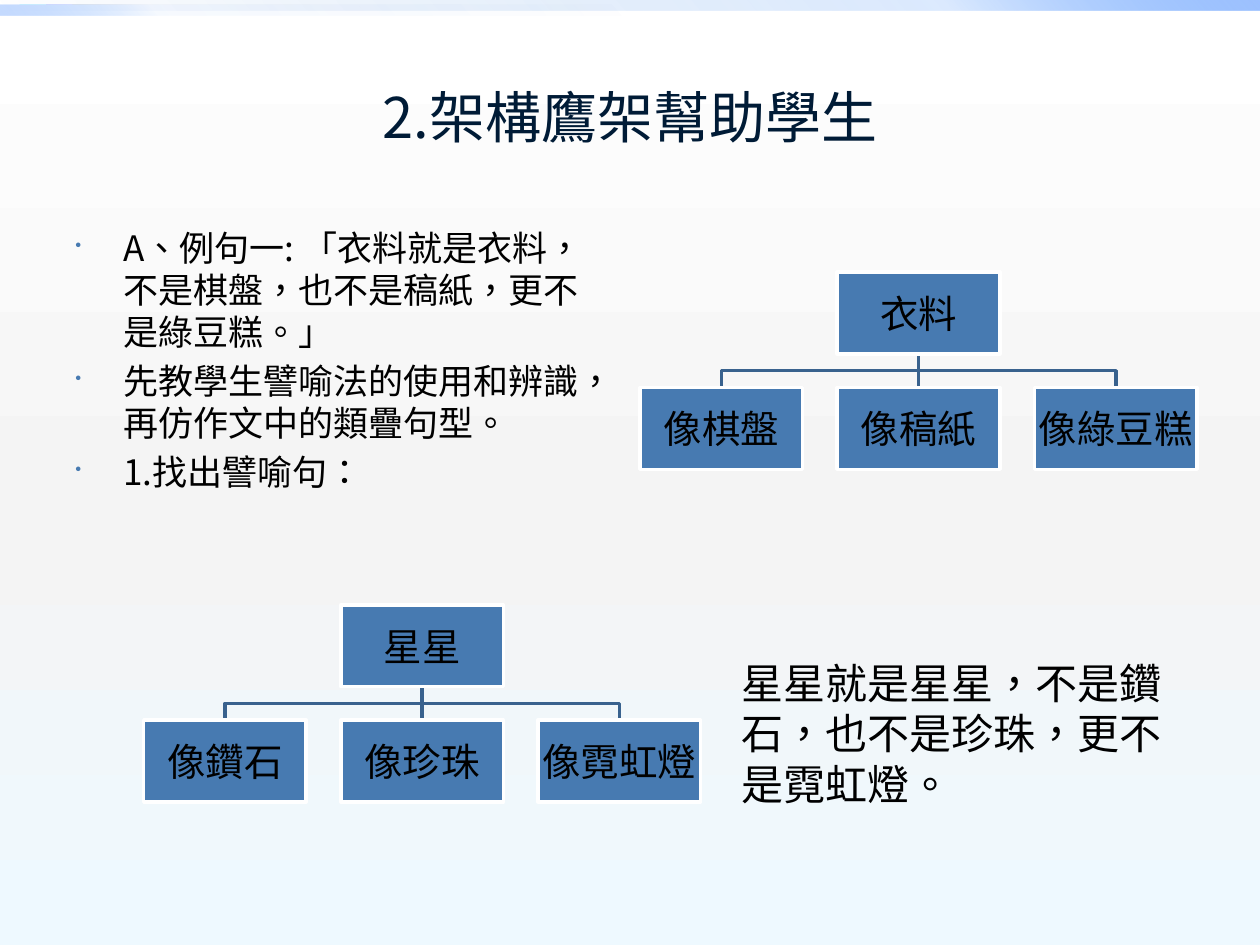
import pptx
import pptx.dml.color
import pptx.enum.lang
import pptx.enum.shapes
import pptx.enum.text
import pptx.oxml
import pptx.oxml.ns
import pptx.util
from pptx.util import Inches

THEME = {
    "font": "Noto Sans CJK SC",
    "latin": "Arial",
    "title": "001B36",
    "text": "000000",
    "box": "477AB1",
    "border": "FFFFFF",
    "link": "39628E",
    "title_size": 32,
    "body_size": 20,
    "box_size": 22,
    "answer_size": 24,
    "line_width": 2,
    "background": [(0, "FFFFFF", 100), (55, "F4F4F4", 100), (100, "EEF9FF", 100)],
}

TITLE = "2.架構鷹架幫助學生"
POINTS = [
    "A、例句一: 「衣料就是衣料，不是棋盤，也不是稿紙，更不是綠豆糕。」",
    "先教學生譬喻法的使用和辨識，再仿作文中的類疊句型。",
    "1.找出譬喻句：",
]
ANSWER = "星星就是星星，不是鑽石，也不是珍珠，更不是霓虹燈。"
TREES = [
    {"root": "衣料", "children": ["像棋盤", "像稿紙", "像綠豆糕"], "left": 5.08, "top": 2.16},
    {"root": "星星", "children": ["像鑽石", "像珍珠", "像霓虹燈"], "left": 1.14, "top": 4.8},
]
BARS = [
    {"place": (0, 0, 10, 0.08), "angle": 315,
     "stops": [(0, "0058B7", 0), (75, "4F95FF", 20), (100, "9EC2FF", 100)]},
    {"place": (0, 0.04, 5, 0.08), "angle": 135,
     "stops": [(0, "0058B7", 0), (75, "4F95FF", 5), (100, "9EC2FF", 60)]},
]
BOX_WIDTH, BOX_HEIGHT = 1.29, 0.65
COLUMN_STEP, ROW_STEP = 1.565, 0.915

MIDDLE = pptx.enum.text.MSO_ANCHOR.MIDDLE
CENTER = pptx.enum.text.PP_ALIGN.CENTER
RECTANGLE = pptx.enum.shapes.MSO_SHAPE.RECTANGLE


def color(value):
    return pptx.dml.color.RGBColor.from_string(value)


def apply(target, values):
    for name, value in values.items():
        setattr(target, name, value)


def add_element(parent, tag, **attributes):
    element = pptx.oxml.parse_xml(f"<{tag} {pptx.oxml.ns.nsdecls('a')}/>")
    for name, value in attributes.items():
        element.set(name, str(value))
    parent.append(element)
    return element


def set_gradient(fill, owner, stops, angle):
    fill.gradient()
    gradient = next(owner.iter(pptx.oxml.ns.qn("a:gradFill")))
    stop_list = gradient.find(pptx.oxml.ns.qn("a:gsLst"))
    for stop in list(stop_list):
        stop_list.remove(stop)
    for position, value, opacity in stops:
        stop = add_element(stop_list, "a:gs", pos=position * 1000)
        shade = add_element(stop, "a:srgbClr", val=value)
        if opacity < 100:
            add_element(shade, "a:alpha", val=opacity * 1000)
    gradient.find(pptx.oxml.ns.qn("a:lin")).set("ang", str(angle * 60000))


def write(paragraph, text, size, ink=THEME["text"], latin=THEME["font"]):
    run = paragraph.add_run()
    run.text = text
    run.font.color.rgb = color(ink)
    apply(run.font, {
        "size": pptx.util.Pt(size),
        "name": latin,
        "language_id": pptx.enum.lang.MSO_LANGUAGE_ID.TRADITIONAL_CHINESE,
    })
    add_element(run.font._element, "a:ea", typeface=THEME["font"])


def style_line(line, value):
    line.color.rgb = color(value)
    line.width = pptx.util.Pt(THEME["line_width"])


def add_text_box(slide, place):
    frame = slide.shapes.add_textbox(*map(Inches, place)).text_frame
    frame.word_wrap = True
    return frame


def add_box(slide, text, left, top):
    shape = slide.shapes.add_shape(
        RECTANGLE, *map(Inches, (left, top, BOX_WIDTH, BOX_HEIGHT)))
    shape.shadow.inherit = False
    shape.fill.solid()
    shape.fill.fore_color.rgb = color(THEME["box"])
    style_line(shape.line, THEME["border"])
    margins = dict.fromkeys(
        ("margin_left", "margin_top", "margin_right", "margin_bottom"), Inches(0.02))
    apply(shape.text_frame, {"word_wrap": True, "vertical_anchor": MIDDLE, **margins})
    paragraph = shape.text_frame.paragraphs[0]
    paragraph.alignment = CENTER
    write(paragraph, text, THEME["box_size"])
    return shape


def link(slide, root, child):
    start_x, start_y = root.left + root.width // 2, root.top + root.height
    end_x, end_y = child.left + child.width // 2, child.top
    if start_x == end_x:
        shape = slide.shapes.add_connector(
            pptx.enum.shapes.MSO_CONNECTOR.STRAIGHT, start_x, start_y, end_x, end_y)
        shape.begin_connect(root, 2)
        shape.end_connect(child, 0)
        style_line(shape.line, THEME["link"])
        add_element(shape._element.spPr, "a:effectLst")
    else:
        bend_y = (start_y + end_y) // 2
        builder = slide.shapes.build_freeform(start_x, start_y)
        builder.add_line_segments(
            [(start_x, bend_y), (end_x, bend_y), (end_x, end_y)], close=False)
        shape = builder.convert_to_shape()
        shape.shadow.inherit = False
        shape.fill.background()
        style_line(shape.line, THEME["link"])
    root._element.addprevious(shape._element)


def add_tree(slide, tree):
    middle = (len(tree["children"]) - 1) / 2
    root = add_box(slide, tree["root"], tree["left"] + middle * COLUMN_STEP, tree["top"])
    for column, text in enumerate(tree["children"]):
        child = add_box(
            slide, text, tree["left"] + column * COLUMN_STEP, tree["top"] + ROW_STEP)
        link(slide, root, child)


def add_points(slide):
    frame = add_text_box(slide, (0.5, 1.75, 4.42, 4.95))
    for index, text in enumerate(POINTS):
        paragraph = frame.add_paragraph() if index else frame.paragraphs[0]
        properties = paragraph._element.get_or_add_pPr()
        properties.set("marL", str(Inches(0.38)))
        properties.set("indent", str(-Inches(0.38)))
        add_element(add_element(properties, "a:buClr"), "a:srgbClr", val=THEME["box"])
        add_element(properties, "a:buSzPct", val=50000)
        add_element(properties, "a:buChar", char="•")
        if index:
            paragraph.space_before = pptx.util.Pt(4)
        write(paragraph, text, THEME["body_size"])


def main():
    presentation = pptx.Presentation()
    apply(presentation, {"slide_width": Inches(10), "slide_height": Inches(7.5)})
    slide = presentation.slides.add_slide(presentation.slide_layouts[5])
    set_gradient(slide.background.fill, slide._element, THEME["background"], 90)

    for bar in BARS:
        shape = slide.shapes.add_shape(RECTANGLE, *map(Inches, bar["place"]))
        shape.shadow.inherit = False
        shape.line.fill.background()
        set_gradient(shape.fill, shape._element, bar["stops"], bar["angle"])

    title = slide.shapes.title
    apply(title, {"left": Inches(0.5), "top": Inches(0.3),
                  "width": Inches(9), "height": Inches(1.25)})
    title.text_frame.vertical_anchor = MIDDLE
    paragraph = title.text_frame.paragraphs[0]
    paragraph.alignment = CENTER
    write(paragraph, TITLE, THEME["title_size"], THEME["title"])

    add_points(slide)
    for tree in TREES:
        add_tree(slide, tree)
    answer = add_text_box(slide, (5.79, 5.17, 3.86, 1.3))
    write(answer.paragraphs[0], ANSWER, THEME["answer_size"], latin=THEME["latin"])
    presentation.save("out.pptx")


if __name__ == "__main__":
    main()
